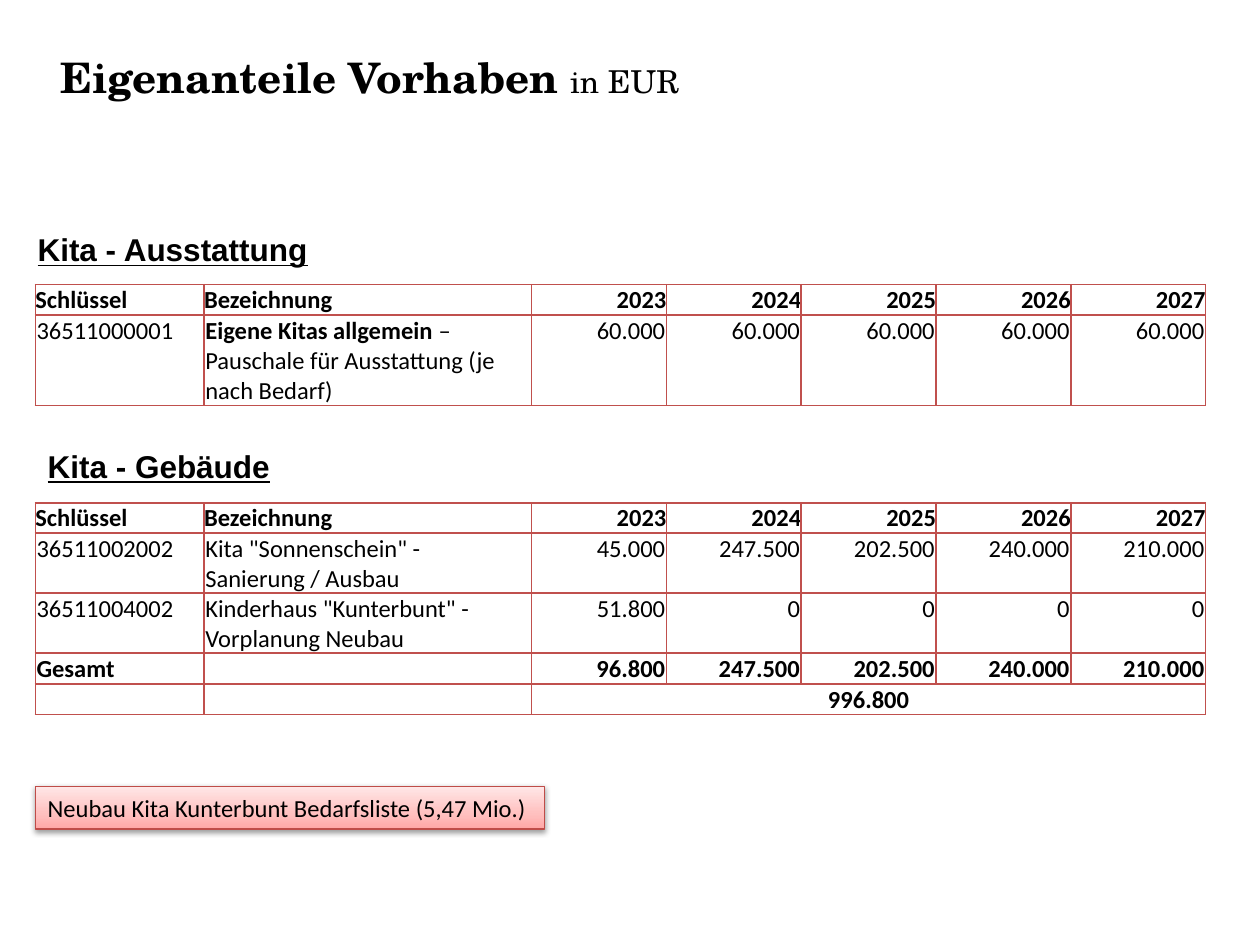
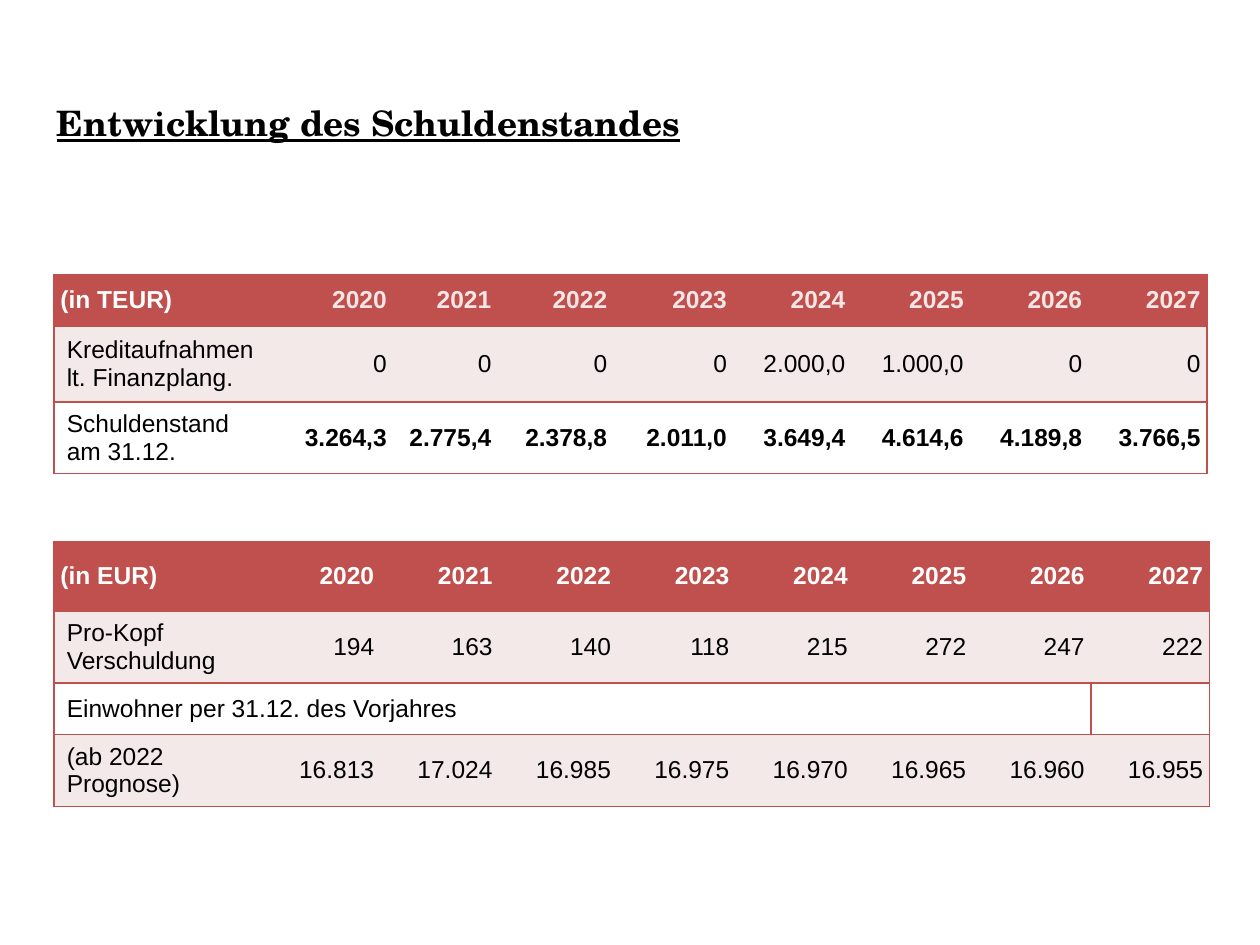
from dataclasses import dataclass

from lxml.etree import SubElement as Sub
from pptx import Presentation
from pptx.dml.color import RGBColor as Color
from pptx.enum.shapes import MSO_SHAPE as Kind
from pptx.enum.text import MSO_ANCHOR as Anchor, MSO_AUTO_SIZE as Fit, PP_ALIGN as Align
from pptx.oxml import parse_xml
from pptx.oxml.ns import nsdecls, qn
from pptx.util import Inches, Pt


@dataclass(frozen=True)
class Theme:
    black: str = "000000"
    white: str = "FFFFFF"
    red: str = "C0504D"
    pale: str = "F6E7E6"
    band: str = "F4E9E9"
    rim: str = "BF4C48"
    glow: tuple = ((0, "FFA6A5"), (35, "FFC0BF"), (100, "FFE7E7"))
    serif: str = "TeX Gyre Schola"
    sans: str = "Arial"
    body: str = "Calibri"
    plain: str = "{2D5ABB26-0587-4C30-8999-92F81FD0307C}"
    big: int = 24
    title: int = 20
    head: int = 18
    text: int = 14


T = Theme()


def put(para, text, font=T.body, size=T.text, color=T.black, bold=False,
        under=False, align=Align.LEFT):
    para.alignment = align
    for num, line in enumerate(text.split("\v")):
        if num:
            para.add_line_break()
            Sub(para._p[-1], qn("a:rPr"), sz=str(size * 100))
        if not line:
            Sub(para._p, qn("a:endParaRPr"), sz=str(size * 100))
            continue
        run = para.add_run()
        run.text = line
        look = run.font
        look.name, look.size = font, Pt(size)
        look.bold, look.underline = bold, under
        look.color.rgb = Color.from_string(color)


def label(slide, box, text, wrap=False, **form):
    frame = slide.shapes.add_textbox(*map(Inches, box)).text_frame
    frame.word_wrap = wrap
    frame.auto_size = Fit.SHAPE_TO_FIT_TEXT
    put(frame.paragraphs[0], text, **form)
    return frame.paragraphs[0]


def note(slide, box, text):
    shape = slide.shapes.add_shape(Kind.RECTANGLE, *map(Inches, box))
    shape.line.color.rgb = Color.from_string(T.rim)
    shape.line.width = Pt(0.75)
    stops = "".join(f'<a:gs pos="{pos * 1000}"><a:srgbClr val="{tone}"/></a:gs>'
                    for pos, tone in T.glow)
    props = shape._element.spPr
    props.insert(2, parse_xml(
        f'<a:gradFill {nsdecls("a")}><a:gsLst>{stops}</a:gsLst>'
        '<a:lin ang="16200000" scaled="0"/></a:gradFill>'))
    props.append(parse_xml(
        f'<a:effectLst {nsdecls("a")}><a:outerShdw blurRad="{Pt(3.1)}" dist="{Pt(1.6)}" '
        f'dir="5400000" rotWithShape="0"><a:srgbClr val="{T.black}">'
        '<a:alpha val="38000"/></a:srgbClr></a:outerShdw></a:effectLst>'))
    frame = shape.text_frame
    frame.word_wrap = False
    put(frame.paragraphs[0], text)


def edge(cell, sides):
    props = cell._tc.get_or_add_tcPr()
    for num, side in enumerate(sides):
        props.insert(num, parse_xml(
            f'<a:ln{side} {nsdecls("a")} w="{Pt(1)}"><a:solidFill>'
            f'<a:srgbClr val="{T.red}"/></a:solidFill></a:ln{side}>'))


def inset(cell, left, top, right, base):
    cell.margin_left, cell.margin_top = Inches(left), Inches(top)
    cell.margin_right, cell.margin_bottom = Inches(right), Inches(base)


def grid(slide, left, top, cols, rows):
    box = map(Inches, (left, top, sum(cols), sum(rows)))
    table = slide.shapes.add_table(len(rows), len(cols), *box).table
    table.first_row = table.horz_banding = False
    table._tbl.tblPr.find(qn("a:tableStyleId")).text = T.plain
    for col, width in zip(table.columns, cols):
        col.width = Inches(width)
    for row, height in zip(table.rows, rows):
        row.height = Inches(height)
    return table


def cells(table, data):
    for row, line in enumerate(data):
        for col, text in enumerate(line):
            yield row, col, table.cell(row, col), text


def plan(slide, top, rows, data, total=False):
    data = [["Schlüssel", "Bezeichnung", *map(str, range(2023, 2028))], *data]
    table = grid(slide, 0.28, top, [1.34, 2.6] + [1.07] * 5, rows)
    last = len(rows) - 1
    for row, col, cell, text in cells(table, data):
        cell.vertical_anchor = Anchor.TOP if row else Anchor.BOTTOM
        inset(cell, *((0.01, 0.01, 0.01, 0) if row else (0, 0, 0, 0)))
        sum_row = total and row == last
        align = Align.CENTER if sum_row else Align.RIGHT if col > 1 else Align.LEFT
        bold = row == 0 or total and row >= last - 1
        frame = cell.text_frame
        for num, part in enumerate(text.split("\n")):
            para = frame.add_paragraph() if num else frame.paragraphs[0]
            lead, dash, rest = part.partition("– ")
            put(para, lead, bold=bold or bool(dash), align=align)
            if dash:
                put(para, dash + rest, align=align)
        edge(cell, "LRTB")
    if total:
        table.cell(last, 2).merge(table.cell(last, 6))


def debt(slide, top, cols, rows, unit, data, tone, wide=None):
    data = [[unit, *map(str, range(2020, 2028))], *data]
    table = grid(slide, 0.43, top, cols, rows)
    end = len(cols) - 1
    for row, col, cell, text in cells(table, data):
        cell.vertical_anchor = Anchor.MIDDLE
        if row == 0 or col:
            inset(cell, 0.05, 0, 0.05, 0)
        fill = T.red if row == 0 else T.band if row % 2 else T.white
        cell.fill.solid()
        cell.fill.fore_color.rgb = Color.from_string(fill)
        color = T.black if row else tone if col else T.white
        strong = row == 0 or col > 0 and data[row][0].startswith("Schuldenstand")
        put(cell.text_frame.paragraphs[0], text, font=T.sans, color=color,
            bold=strong, align=Align.RIGHT if col else Align.LEFT)
        left = col == 0 or row == wide and col == end
        edge(cell, "L" * left + "R" * (col == end) + "TB")
    if wide:
        table.cell(wide, 0).merge(table.cell(wide, 6))


def shares(slide):
    plan(slide, 2.26, [0.24, 0.7], [
        ["36511000001", "Eigene Kitas allgemein – Pauschale für Ausstattung (je nach Bedarf)"]
        + ["60.000"] * 5])
    for box, text in (((0.2, 1.78, 2.37, 0.4), "Kita - Ausstattung"),
                      ((0.28, 3.5, 1.98, 0.4), "Kita - Gebäude")):
        label(slide, box, text, font=T.sans, size=T.head, bold=True, under=True)
    plan(slide, 3.99, [0.24, 0.47, 0.47, 0.24, 0.24], [
        ["36511002002", 'Kita "Sonnenschein" -\nSanierung / Ausbau',
         "45.000", "247.500", "202.500", "240.000", "210.000"],
        ["36511004002", 'Kinderhaus "Kunterbunt" - Vorplanung Neubau', "51.800"] + ["0"] * 4,
        ["Gesamt", "", "96.800", "247.500", "202.500", "240.000", "210.000"],
        ["", "", "996.800", "", "", "", ""]], total=True)
    note(slide, (0.28, 6.24, 4.04, 0.34), "Neubau Kita Kunterbunt Bedarfsliste (5,47 Mio.)")
    para = label(slide, (0.38, 0.36, 5.99, 0.5), "Eigenanteile Vorhaben ", wrap=True,
                 font=T.serif, size=T.big, bold=True)
    put(para, "in EUR", font=T.serif, size=T.head)


def debts(slide):
    label(slide, (0.35, 0.76, 7.39, 0.44), "Entwicklung des Schuldenstandes", wrap=True,
          font=T.serif, size=T.title, bold=True, under=True)
    debt(slide, 2.18, [1.88, 0.81, 0.83, 0.92, 0.95] + [0.94] * 4, [0.41, 0.6, 0.57],
         "(in TEUR)", [
        ["Kreditaufnahmen\vlt. Finanzplang.", "0", "0", "0", "0", "2.000,0", "1.000,0", "0", "0"],
        ["Schuldenstand\vam 31.12.", "3.264,3", "2.775,4", "2.378,8", "2.011,0",
         "3.649,4", "4.614,6", "4.189,8", "3.766,5"]], T.pale)
    debt(slide, 4.3, [1.88, 0.71] + [0.94] * 7, [0.55, 0.57, 0.41, 0.57], "(in EUR)", [
        ["Pro-Kopf\vVerschuldung", "194", "163", "140", "118", "215", "272", "247", "222"],
        ["Einwohner per 31.12. des Vorjahres"] + [""] * 8,
        ["(ab 2022 Prognose)", "16.813", "17.024", "16.985", "16.975",
         "16.970", "16.965", "16.960", "16.955"]], T.white, wide=2)


def main():
    deck = Presentation()
    deck.slide_width, deck.slide_height = Inches(10), Inches(7.5)
    for build in (shares, debts):
        build(deck.slides.add_slide(deck.slide_layouts[6]))
    deck.save("out.pptx")


if __name__ == "__main__":
    main()
